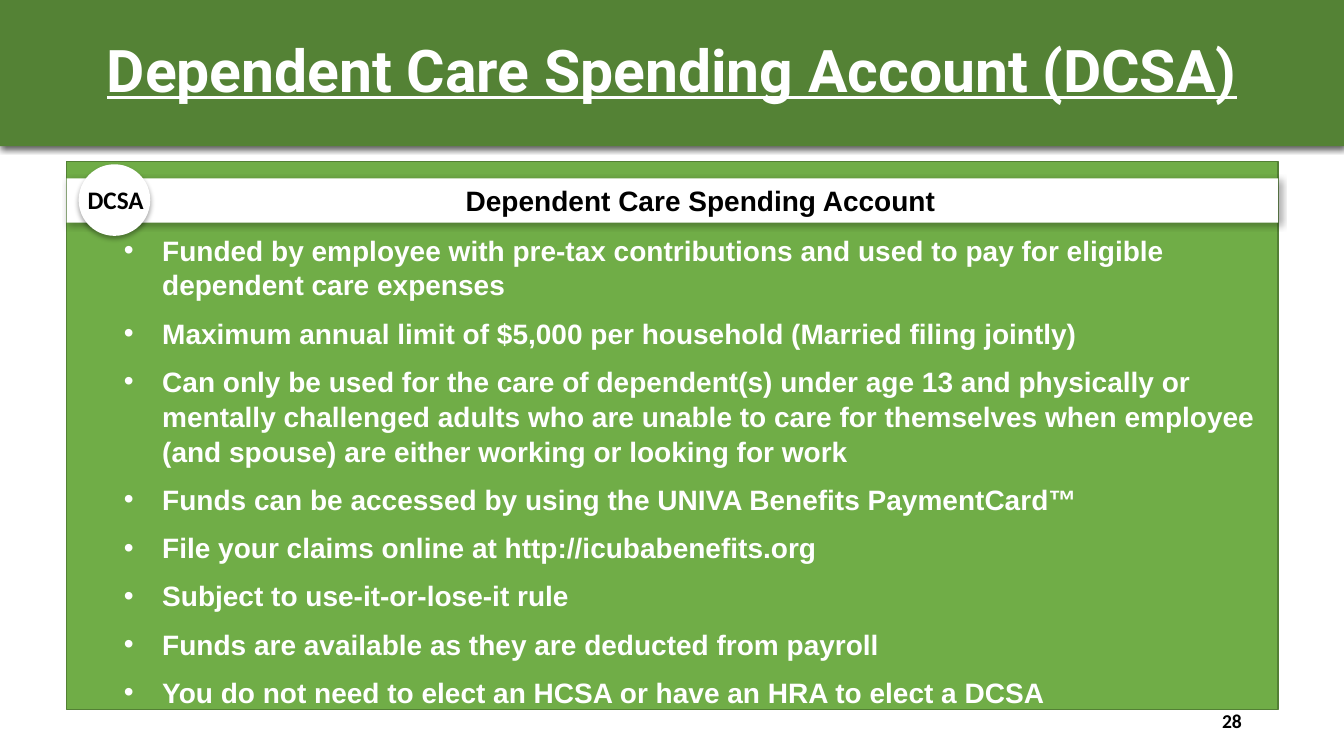
from lxml.etree import SubElement as Sub
from pptx import Presentation as Deck
from pptx.dml.color import RGBColor as Rgb
from pptx.enum.shapes import MSO_SHAPE as Kind
from pptx.enum.text import MSO_ANCHOR as Anchor, MSO_AUTO_SIZE as Fit, PP_ALIGN as Align
from pptx.oxml.ns import qn
from pptx.util import Inches, Pt

WHITE, BLACK = "FFFFFF", "000000"
DARK, GREEN, EDGE = "548235", "70AD47", "538035"

POINTS = [
    "Funded by employee with pre-tax contributions and used to pay for eligible dependent care expenses",
    "Maximum annual limit of $5,000 per household (Married filing jointly)",
    "Can only be used for the care of dependent(s) under age 13 and physically or mentally challenged "
    "adults who are unable to care for themselves when employee (and spouse) are either working or "
    "looking for work",
    "Funds can be accessed by using the UNIVA Benefits PaymentCard™",
    "File your claims online at http://icubabenefits.org",
    "Subject to use-it-or-lose-it rule",
    "Funds are available as they are deducted from payroll",
    "You do not need to elect an HCSA or have an HRA to elect a DCSA",
]


def color(code):
    return Rgb.from_string(code)


class Page:
    def __init__(self, deck):
        self.col = deck.slide_width / 100
        self.row = deck.slide_height / 100
        self.slide = deck.slides.add_slide(deck.slide_layouts[5])

    def box(self, x, y, w, h):
        return [int(n) for n in (x * self.col, y * self.row, w * self.col, h * self.row)]

    def paint(self, shape, fill, edge=None):
        shape.fill.solid()
        shape.fill.fore_color.rgb = color(fill)
        if edge:
            shape.line.color.rgb = color(edge)
            shape.line.width = Pt(1)
        else:
            shape.line.fill.background()

    def shade(self, shape, alpha, blur, dist, angle):
        props = shape._element.spPr
        for old in props.findall(qn("a:effectLst")):
            props.remove(old)
        cast = Sub(Sub(props, qn("a:effectLst")), qn("a:outerShdw"), blurRad=str(Pt(blur)),
                   dist=str(Pt(dist)), dir=str(angle * 60000), algn="ctr", rotWithShape="0")
        tint = Sub(cast, qn("a:srgbClr"), val=BLACK)
        Sub(tint, qn("a:alpha"), val=str(alpha * 1000))

    def words(self, shape, text, font, size, ink, align=Align.LEFT, anchor=Anchor.TOP):
        frame = shape.text_frame
        frame.text = text
        frame.word_wrap = True
        frame.auto_size = Fit.NONE
        frame.vertical_anchor = anchor
        for para in frame.paragraphs:
            para.alignment = align
            for run in para.runs:
                run.font.name, run.font.size, run.font.bold = font, Pt(size), True
                run.font.color.rgb = color(ink)
        return frame

    def title(self, text, spot):
        shape = self.slide.shapes.title
        shape.left, shape.top, shape.width, shape.height = self.box(*spot)
        self.paint(shape, DARK)
        self.shade(shape, 63, 4.5, 1.5, 90)
        para = self.words(shape, text, "Roboto", 42, WHITE, Align.CENTER, Anchor.MIDDLE).paragraphs[0]
        para.line_spacing = 0.9
        para.runs[0].font.underline = True

    def block(self, kind, spot, fill, edge=None):
        shape = self.slide.shapes.add_shape(kind, *self.box(*spot))
        shape.shadow.inherit = False
        self.paint(shape, fill, edge)
        return shape

    def label(self, text, spot, font, size, ink, **place):
        shape = self.slide.shapes.add_textbox(*self.box(*spot))
        return self.words(shape, text, font, size, ink, **place)

    def strip(self, text, spot):
        shape = self.block(Kind.RECTANGLE, spot, WHITE)
        self.shade(shape, 30, 4.5, 2.6, 53)
        frame = self.words(shape, text, "Arial", 20, BLACK, Align.CENTER, Anchor.MIDDLE)
        frame.paragraphs[0]._p.get_or_add_pPr().set("marL", str(Inches(0.56)))

    def badge(self, text, disc, spot):
        shape = self.block(Kind.FLOWCHART_CONNECTOR, disc, WHITE)
        self.shade(shape, 32, 3.5, 2.2, 90)
        self.label(text, spot, "Calibri", 18, BLACK)

    def bullets(self, items, spot):
        frame = self.label("\n".join(items), spot, "Arial", 20, WHITE)
        for i, para in enumerate(frame.paragraphs):
            props = para._p.get_or_add_pPr()
            props.set("marL", str(Inches(0.38)))
            props.set("indent", str(-Inches(0.38)))
            Sub(props, qn("a:buFont"), typeface="Arial")
            Sub(props, qn("a:buChar"), char="•")
            para.line_spacing = 1.04
            if i:
                para.space_before = Pt(9.5)


def main():
    deck = Deck()
    deck.slide_width, deck.slide_height = Inches(13.33), Inches(7.5)
    page = Page(deck)
    page.title("Dependent Care Spending Account (DCSA)", (0, 0, 100, 19.33))
    page.block(Kind.RECTANGLE, (4.95, 21.33, 90.15, 72.53), GREEN, EDGE)
    page.strip("Dependent Care Spending Account", (4.95, 23.6, 90.15, 5.87))
    page.badge("DCSA", (5.85, 21.73, 5.33, 9.47), (5.78, 23.73, 6.38, 5.33))
    page.bullets(POINTS, (8.48, 30, 86.5, 63.33))
    page.label("28", (70.65, 92.67, 22.5, 5.33), "Calibri", 14, BLACK,
               align=Align.RIGHT, anchor=Anchor.MIDDLE)
    deck.save("out.pptx")


if __name__ == "__main__":
    main()
